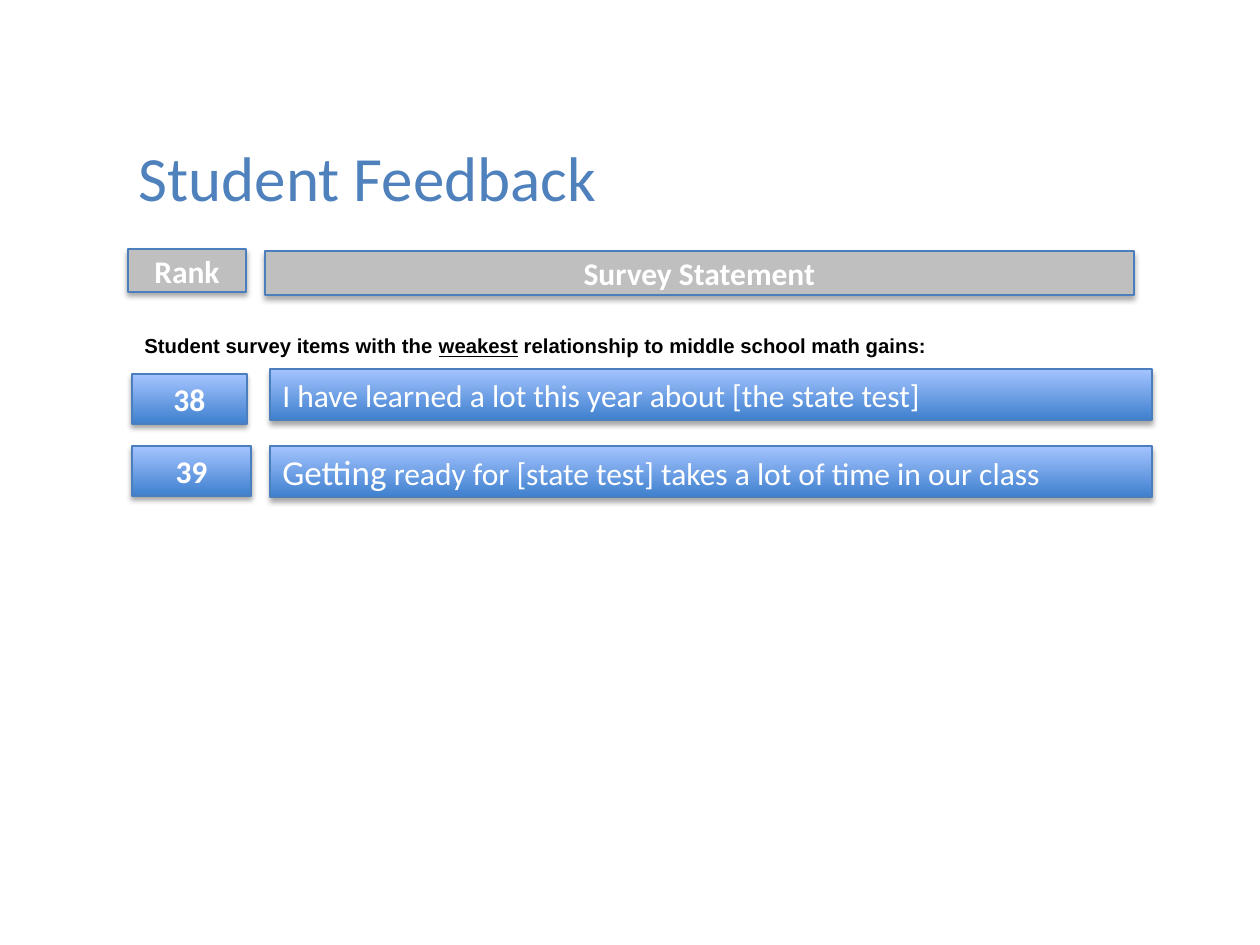
from lxml import etree
from pptx import Presentation
from pptx import util as u
from pptx.dml.color import RGBColor
from pptx.enum import shapes, text
from pptx.oxml.ns import qn

SCALE = 914400 / 126  # EMU per px
COLORS = {
    "white": "FFFFFF", "black": "000000", "title": "4F81BD", "header": "BFBFBF",
    "border": "4B7EBC", "deep": "3F80CE", "light": "A4C4FF",
}


def px(length):
    return u.Emu(round(length * SCALE))


def color(name):
    return RGBColor.from_string(COLORS[name])


def add_span(para, words, size=18, font="Calibri", ink="white", bold=False,
             underline=False, baseline=0):
    span = para.add_run()
    span.text = words
    span.font.size = u.Pt(size)
    span.font.name = font
    span.font.bold = bold
    span.font.underline = underline
    span.font.color.rgb = color(ink)
    if baseline:
        span.font._element.set("baseline", str(baseline * 1000))


class SlideBuilder:
    def __init__(self, deck):
        self.slide = deck.slides.add_slide(deck.slide_layouts[5])

    def place(self, shape, area):
        shape.left, shape.top, shape.width, shape.height = map(px, area)

    def title(self, area, words):
        box = self.slide.shapes.title
        self.place(box, area)
        frame = box.text_frame
        frame.auto_size = text.MSO_AUTO_SIZE.NONE
        frame.vertical_anchor = text.MSO_ANCHOR.BOTTOM
        para = frame.paragraphs[0]
        para.alignment = text.PP_ALIGN.LEFT
        add_span(para, words, size=36, ink="title")

    def shadow(self, shape):
        shape.shadow.inherit = False
        effects = shape._element.spPr.find(qn("a:effectLst"))
        outer = etree.SubElement(effects, qn("a:outerShdw"), blurRad=str(u.Pt(3.1)),
                                 dist=str(u.Pt(1.8)), dir="5400000", rotWithShape="0")
        shade = etree.SubElement(outer, qn("a:srgbClr"), val=COLORS["black"])
        etree.SubElement(shade, qn("a:alpha"), val="35000")

    def bar(self, area, spans, header=False, centered=True):
        box = self.slide.shapes.add_shape(shapes.MSO_SHAPE.RECTANGLE, *map(px, area))
        if header:
            box.fill.solid()
            box.fill.fore_color.rgb = color("header")
        else:
            box.fill.gradient()
            box.fill.gradient_angle = 90
            for stop, name, position in zip(box.fill.gradient_stops, ("deep", "light"), (0, 1)):
                stop.color.rgb = color(name)
                stop.position = position
        box.line.color.rgb = color("border")
        box.line.width = u.Pt(0.75)
        self.shadow(box)
        box.text_frame.vertical_anchor = text.MSO_ANCHOR.MIDDLE
        para = box.text_frame.paragraphs[0]
        para.alignment = text.PP_ALIGN.CENTER if centered else text.PP_ALIGN.LEFT
        for words, size in spans:
            add_span(para, words, size=size, bold=centered)

    def note(self, area, spans):
        box = self.slide.shapes.add_textbox(*map(px, area))
        frame = box.text_frame
        frame.word_wrap = True
        frame.auto_size = text.MSO_AUTO_SIZE.SHAPE_TO_FIT_TEXT
        for words, underline in spans:
            add_span(frame.paragraphs[0], words, size=20, font="Arial", ink="black",
                     bold=True, underline=underline, baseline=-25)


def main():
    deck = Presentation()
    deck.slide_width, deck.slide_height = u.Inches(10), u.Inches(7.5)
    page = SlideBuilder(deck)
    page.title((126, 137, 1134, 83), "Student Feedback")

    # Column headers
    page.bar((265, 251, 869, 44), [("Survey Statement", 18)], header=True)
    page.bar((128, 249, 118, 43), [("Rank", 18)], header=True)

    # Ranked statements: rank top, rank width, statement top
    rows = [
        ("38", 374, 115, 369, [("I have learned a lot this year about [the state test]", 18)]),
        ("39", 446, 119, 446, [("Getting", 20),
                               (" ready for [state test] takes a lot of time in our class", 18)]),
    ]
    for rank, rank_top, rank_width, top, statement in rows:
        page.bar((132, rank_top, rank_width, 50), [(rank, 18)])
        page.bar((270, top, 882, 51), statement, centered=False)

    # Lead-in line
    page.note((132, 304, 1126, 42), [
        ("Student survey items with the ", False),
        ("weakest", True),
        (" relationship to middle school math gains:", False),
    ])
    deck.save("out.pptx")


if __name__ == "__main__":
    main()
